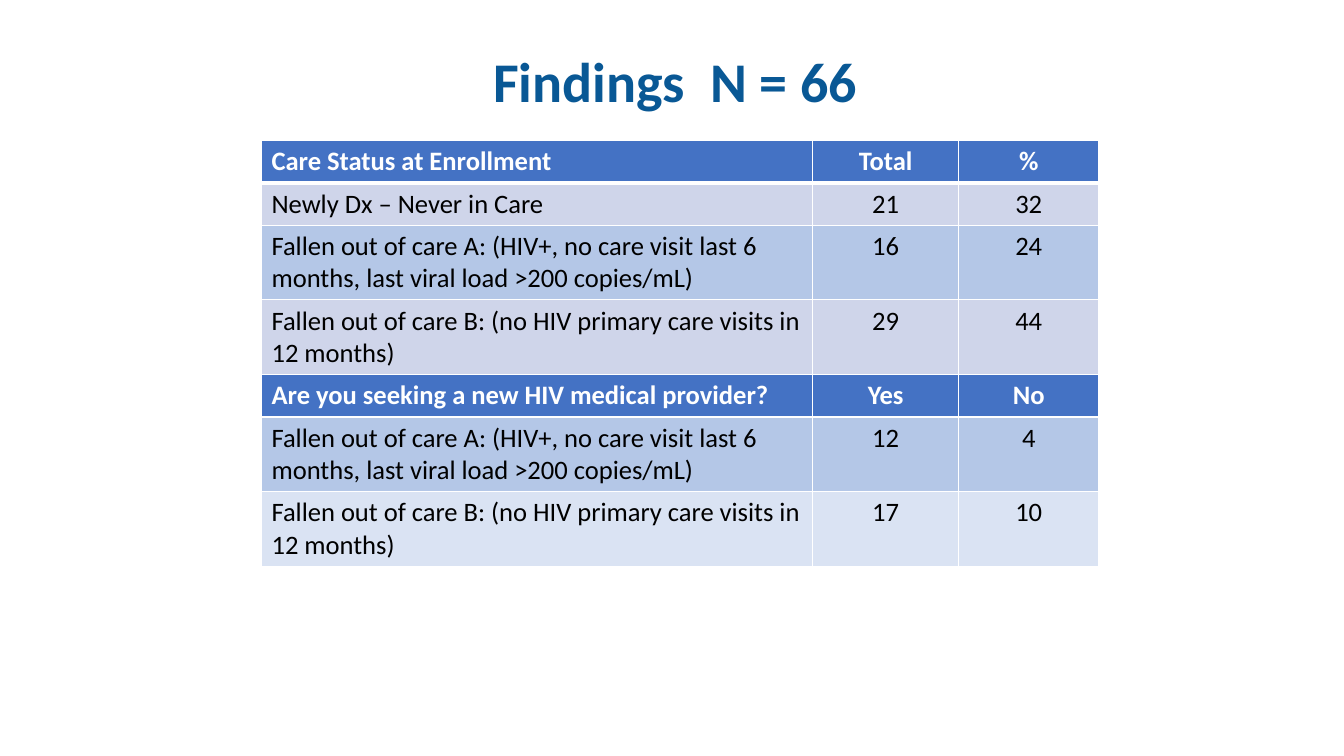
from dataclasses import dataclass

from lxml import etree
from pptx import Presentation
from pptx import util as u
from pptx.dml.color import RGBColor
from pptx.enum import text
from pptx.oxml import ns

FONT = "Calibri"
COLORS = {
    "title": "095895",
    "header": "4472C4",
    "grey": "CFD5EA",
    "blue": "B4C7E7",
    "pale": "DAE3F3",
    "black": "000000",
    "white": "FFFFFF",
}
COLUMN_WIDTHS = (13.89, 3.68, 3.53)
LINE_HEIGHTS = {1: 1.05, 2: 1.87}
FALLEN_A = "Fallen out of care A: (HIV+, no care visit last 6 months, last viral load >200 copies/mL)"
FALLEN_B = "Fallen out of care B: (no HIV primary care visits in 12 months)"


@dataclass
class FindingsRow:
    values: tuple[str, str, str]
    fill: str
    lines: int = 1

    @property
    def is_header(self) -> bool:
        return self.fill == "header"


ROWS = [
    FindingsRow(("Care Status at Enrollment", "Total", "%"), "header"),
    FindingsRow(("Newly Dx – Never in Care", "21", "32"), "grey"),
    FindingsRow((FALLEN_A, "16", "24"), "blue", 2),
    FindingsRow((FALLEN_B, "29", "44"), "grey", 2),
    FindingsRow(("Are you seeking a new HIV medical provider?", "Yes", "No"), "header"),
    FindingsRow((FALLEN_A, "12", "4"), "blue", 2),
    FindingsRow((FALLEN_B, "17", "10"), "pale", 2),
]


def add_run(paragraph, words: str, size: float, color: str, bold: bool) -> None:
    run = paragraph.add_run()
    run.text = words
    run.font.name = FONT
    run.font.size = u.Pt(size)
    run.font.bold = bold
    run.font.color.rgb = RGBColor.from_string(COLORS[color])


def set_borders(cell, top: float, bottom: float) -> None:
    """Give a cell white borders, with widths in points."""
    properties = cell._tc.get_or_add_tcPr()
    for side, width in (("L", 1), ("R", 1), ("T", top), ("B", bottom)):
        line = etree.SubElement(properties, ns.qn(f"a:ln{side}"), w=str(u.Pt(width)))
        fill = etree.SubElement(line, ns.qn("a:solidFill"))
        etree.SubElement(fill, ns.qn("a:srgbClr"), val=COLORS["white"])


def add_title(slide) -> None:
    title = slide.shapes.title
    title.left, title.top = u.Cm(6.07), u.Cm(1.35)
    title.width, title.height = u.Cm(21.89), u.Cm(1.57)
    title.text_frame.vertical_anchor = text.MSO_ANCHOR.MIDDLE
    title.text_frame.auto_size = text.MSO_AUTO_SIZE.NONE
    paragraph = title.text_frame.paragraphs[0]
    paragraph.alignment = text.PP_ALIGN.CENTER
    paragraph.line_spacing = 0.9
    add_run(paragraph, "Findings  N = 66", 40, "title", True)


def add_findings_table(slide) -> None:
    heights = [LINE_HEIGHTS[row.lines] for row in ROWS]
    table = slide.shapes.add_table(
        len(ROWS), len(COLUMN_WIDTHS), u.Cm(6.59), u.Cm(3.54),
        u.Cm(sum(COLUMN_WIDTHS)), u.Cm(sum(heights)),
    ).table
    for column, width in zip(table.columns, COLUMN_WIDTHS):
        column.width = u.Cm(width)

    for row_index, row in enumerate(ROWS):
        table.rows[row_index].height = u.Cm(heights[row_index])
        for column_index, value in enumerate(row.values):
            cell = table.cell(row_index, column_index)
            # A thick rule separates the first header from the rows below
            set_borders(cell, top=3 if row_index == 1 else 1,
                        bottom=3 if row_index == 0 else 1)
            cell.fill.solid()
            cell.fill.fore_color.rgb = RGBColor.from_string(COLORS[row.fill])
            paragraph = cell.text_frame.paragraphs[0]
            paragraph.alignment = text.PP_ALIGN.CENTER if column_index else text.PP_ALIGN.LEFT
            add_run(paragraph, value, 19, "white" if row.is_header else "black", row.is_header)


def main() -> None:
    presentation = Presentation()
    presentation.slide_width, presentation.slide_height = u.Cm(33.87), u.Cm(19.05)
    title_only = presentation.slide_layouts.get_by_name("Title Only")
    slide = presentation.slides.add_slide(title_only)
    # Heading
    add_title(slide)
    # Care status and provider search
    add_findings_table(slide)
    presentation.save("out.pptx")


if __name__ == "__main__":
    main()
